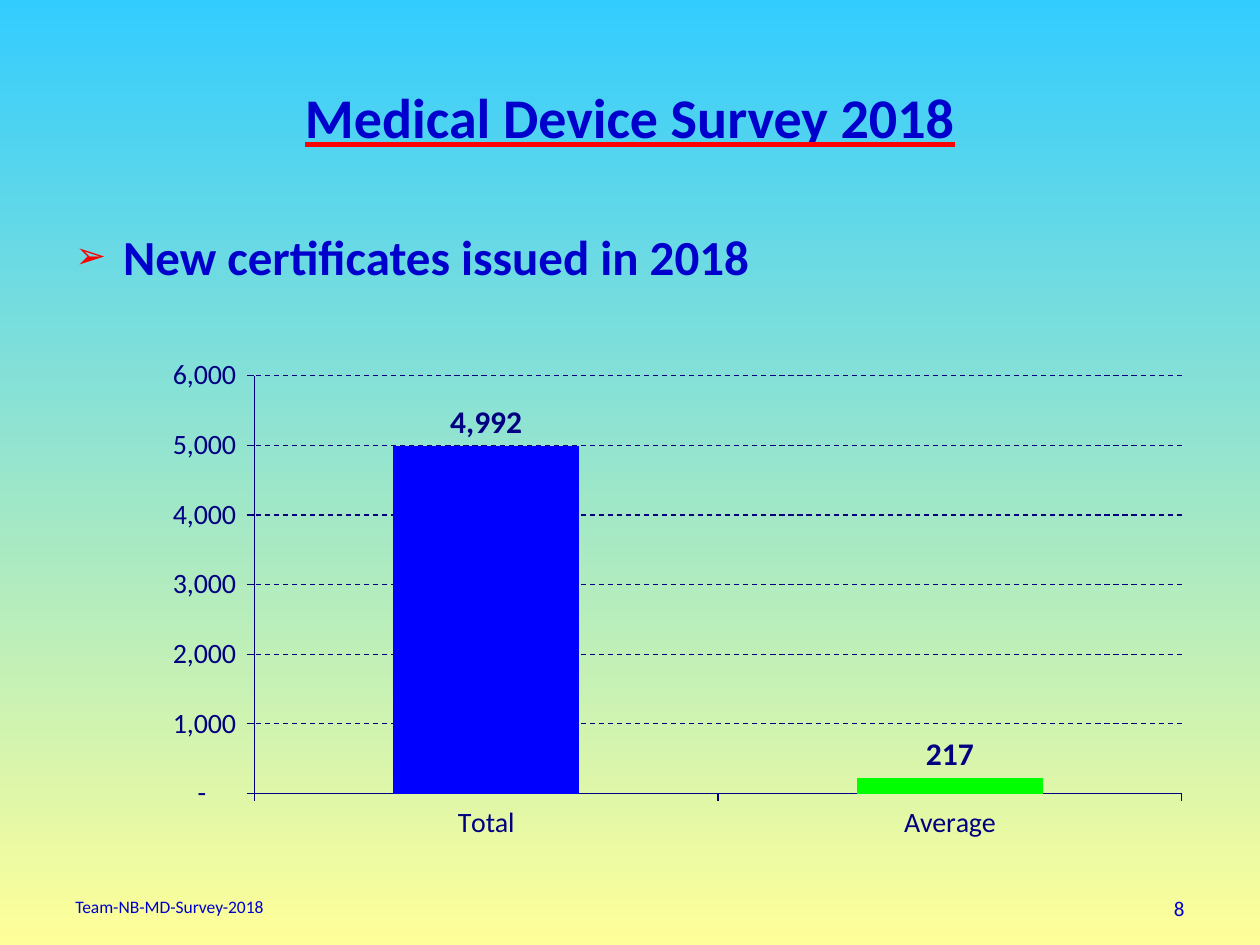
from dataclasses import dataclass

from lxml import etree
from pptx import Presentation
from pptx.chart.data import CategoryChartData
from pptx.dml.color import RGBColor
from pptx.enum.chart import XL_CHART_TYPE, XL_LABEL_POSITION, XL_TICK_MARK
from pptx.enum.dml import MSO_LINE
from pptx.enum.text import MSO_ANCHOR, PP_ALIGN
from pptx.oxml import parse_xml
from pptx.oxml.ns import nsdecls, qn
from pptx.util import Inches, Pt

COLUMN = XL_CHART_TYPE.COLUMN_CLUSTERED
OUTSIDE_END = XL_LABEL_POSITION.OUTSIDE_END
TICK_OUT, TICK_NONE = XL_TICK_MARK.OUTSIDE, XL_TICK_MARK.NONE
DASH = MSO_LINE.DASH
TOP, MIDDLE = MSO_ANCHOR.TOP, MSO_ANCHOR.MIDDLE
LEFT, CENTER, RIGHT = PP_ALIGN.LEFT, PP_ALIGN.CENTER, PP_ALIGN.RIGHT

WIDTH, HEIGHT = 10, 7.5
MARGIN = 0.05 * WIDTH
CONTENT = WIDTH - 2 * MARGIN
FOOTER_TOP, FOOTER_HEIGHT = 7.06, 0.29
NUMBER_FORMAT = '_ * #,##0_ ;_ * \\-#,##0_ ;_ * "-"??_ ;_ '


@dataclass(frozen=True)
class Theme:
    font: str = "Calibri"
    text: str = "0000CC"
    accent: str = "FF0000"
    sky: str = "33CCFF"
    sand: str = "FFFF99"
    chart: str = "000080"
    bars: tuple = ("0000FF", "00FF00")
    title: int = 32
    body: int = 28
    label: int = 18
    axis: int = 16
    number: int = 12
    footer: int = 10


THEME = Theme()


def rgb(value):
    return RGBColor.from_string(value)


def style_font(font, size, color, bold=False):
    font.name = THEME.font
    font.size = Pt(size)
    font.bold = bold
    font.color.rgb = rgb(color)


def add_background(s):
    fill = s.background.fill
    fill.gradient()
    fill.gradient_angle = 270
    for stop, color in zip(fill.gradient_stops, (THEME.sky, THEME.sand)):
        stop.color.rgb = rgb(color)


def add_text(s, box, text, size, align=LEFT, anchor=TOP, bold=False):
    tf = s.shapes.add_textbox(*map(Inches, box)).text_frame
    tf.word_wrap = True
    tf.vertical_anchor = anchor
    p = tf.paragraphs[0]
    p.alignment = align
    r = p.add_run()
    r.text = text
    style_font(r.font, size, THEME.text, bold)
    return p, r


def underline(r, color):
    r.font.underline = True
    fill = parse_xml(f'<a:uFill {nsdecls("a")}><a:solidFill>'
                     f'<a:srgbClr val="{color}"/></a:solidFill></a:uFill>')
    r.font._element.find(qn("a:latin")).addprevious(fill)


def add_bullet(p, char, color, percent, indent):
    pPr = p._p.get_or_add_pPr()
    pPr.set("marL", str(Inches(indent)))
    pPr.set("indent", str(-Inches(indent)))
    clr = etree.SubElement(pPr, qn("a:buClr"))
    etree.SubElement(clr, qn("a:srgbClr"), val=color)
    etree.SubElement(pPr, qn("a:buSzPct"), val=str(percent * 1000))
    etree.SubElement(pPr, qn("a:buFont"), typeface="Arial")
    etree.SubElement(pPr, qn("a:buChar"), char=char)


def style_line(line):
    line.color.rgb = rgb(THEME.chart)
    line.width = Pt(0.75)


def style_axis(axis):
    axis.major_tick_mark = TICK_OUT
    axis.minor_tick_mark = TICK_NONE
    style_font(axis.tick_labels.font, THEME.axis, THEME.chart)
    style_line(axis.format.line)


def place_plot(chart, x, y, w, h):
    area = chart._chartSpace.chart.plotArea
    for old in area.findall(qn("c:layout")):
        area.remove(old)
    layout = etree.Element(qn("c:layout"))
    manual = etree.SubElement(layout, qn("c:manualLayout"))
    values = dict(layoutTarget="inner", xMode="edge", yMode="edge",
                  x=x, y=y, w=w, h=h)
    for tag, value in values.items():
        etree.SubElement(manual, qn(f"c:{tag}"), val=str(value))
    area.insert(0, layout)


def add_column_chart(s, box, values, maximum, step):
    data = CategoryChartData(number_format=NUMBER_FORMAT)
    data.categories = list(values)
    data.add_series("Certificates", list(values.values()))
    chart = s.shapes.add_chart(COLUMN, *map(Inches, box), data).chart
    chart.has_legend = False
    chart.has_title = False
    style_font(chart.font, THEME.axis, THEME.chart)

    style_axis(chart.category_axis)
    axis = chart.value_axis
    style_axis(axis)
    axis.minimum_scale, axis.maximum_scale = 0, maximum
    axis.major_unit = step
    axis.tick_labels.number_format = NUMBER_FORMAT
    axis.tick_labels.number_format_is_linked = False
    grid = axis.major_gridlines.format.line
    style_line(grid)
    grid.dash_style = DASH

    plot = chart.plots[0]
    plot.gap_width = 150
    plot.vary_by_categories = False
    plot.has_data_labels = True
    labels = plot.data_labels
    labels.show_value = True
    labels.position = OUTSIDE_END
    labels.number_format = NUMBER_FORMAT
    labels.number_format_is_linked = False
    style_font(labels.font, THEME.label, THEME.chart, bold=True)
    for i, color in enumerate(THEME.bars):
        fill = plot.series[0].points[i].format.fill
        fill.solid()
        fill.fore_color.rgb = rgb(color)
    place_plot(chart, 0.12, 0.16, 0.85, 0.67)


def main():
    prs = Presentation()
    prs.slide_width, prs.slide_height = Inches(WIDTH), Inches(HEIGHT)
    s = prs.slides.add_slide(prs.slide_layouts[6])
    add_background(s)

    _, r = add_text(s, (MARGIN, 0.3, CONTENT, 1.25),
                    "Medical Device Survey 2018", THEME.title,
                    CENTER, MIDDLE, bold=True)
    underline(r, THEME.accent)

    p, _ = add_text(s, (MARGIN, 1.75, CONTENT, 0.82),
                    "New certificates issued in 2018", THEME.body, bold=True)
    add_bullet(p, "➢", THEME.accent, 75, 0.38)

    add_column_chart(s, (0.98, 2.19, 8.66, 4.95),
                     {"Total": 4992, "Average": 217}, 6000, 1000)

    add_text(s, (MARGIN, FOOTER_TOP, 3.17, FOOTER_HEIGHT),
             "Team-NB-MD-Survey-2018", THEME.footer)
    number_width = 2.33
    add_text(s, (WIDTH - MARGIN - number_width, FOOTER_TOP, number_width,
                 FOOTER_HEIGHT), "8", THEME.number, RIGHT)
    prs.save("out.pptx")


if __name__ == "__main__":
    main()
